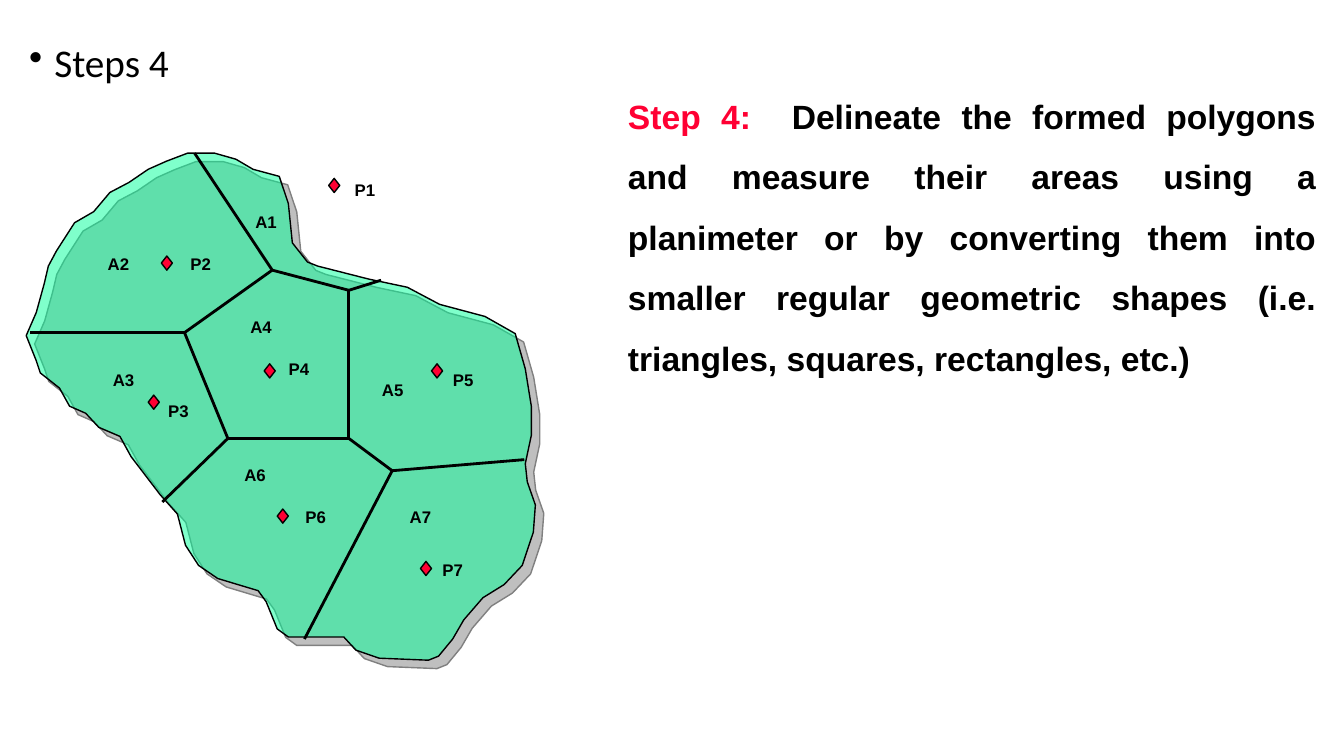
"""Build the slide on step 4 of the Thiessen polygon method."""
from lxml.etree import SubElement
from pptx import Presentation
from pptx.dml.color import RGBColor
from pptx.enum.shapes import MSO_CONNECTOR, MSO_SHAPE
from pptx.enum.text import PP_ALIGN
from pptx.oxml.ns import qn
from pptx.util import Inches, Pt

SIZE = (13.33, 7.5)
BLACK, RED, GREEN, GREY = "000000", "FF0033", "00FF99", "808080"
TITLE = "Steps 4"
STEP = [
    ("Step 4:", RED),
    ("  Delineate the formed polygons and measure their areas using a planimeter or by "
     "converting them into smaller regular geometric shapes (i.e. triangles, squares, "
     "rectangles, etc.)", BLACK),
]
BASIN = [
    (1.86, 1.52), (1.65, 1.6), (1.47, 1.68), (1.28, 1.81), (1.09, 1.91), (0.93, 2.1),
    (0.74, 2.21), (0.56, 2.49), (0.48, 2.64), (0.44, 2.81), (0.36, 3.1), (0.26, 3.33),
    (0.36, 3.58), (0.4, 3.7), (0.59, 3.85), (0.69, 4.03), (0.85, 4.1), (0.98, 4.24),
    (1.19, 4.33), (1.3, 4.53), (1.43, 4.7), (1.59, 4.91), (1.76, 5.1), (1.84, 5.41),
    (1.97, 5.61), (2.16, 5.74), (2.56, 5.86), (2.64, 5.97), (2.75, 6.24), (2.86, 6.32),
    (3.41, 6.32), (3.53, 6.45), (3.76, 6.53), (4.25, 6.55), (4.35, 6.51), (4.49, 6.34),
    (4.6, 6.15), (4.79, 5.93), (5, 5.8), (5.18, 5.61), (5.29, 5.28), (5.31, 5.01),
    (5.23, 4.78), (5.21, 4.6), (5.27, 4.32), (5.27, 4.03), (5.21, 3.66), (5.11, 3.31),
    (4.81, 3.14), (4.36, 3.02), (4.04, 2.85), (3.66, 2.77), (3.15, 2.64), (3.05, 2.6),
    (2.9, 2.41), (2.86, 2.02), (2.77, 1.75), (2.51, 1.68), (2.34, 1.58), (2.13, 1.52),
]
GAUGES = [(1.6, 2.54), (1.47, 3.92), (3.26, 1.77), (2.62, 3.61), (2.75, 5.05),
          (4.28, 3.61), (4.17, 5.57)]
GAUGE_SIZE = (0.11, 0.14)
NODES = {
    "west": (1.83, 3.3), "north": (2.7, 2.68), "east": (3.46, 2.88),
    "southwest": (2.26, 4.35), "south": (3.46, 4.35), "southeast": (3.89, 4.67),
    "edge12": (1.93, 1.52), "edge23": (0.3, 3.3), "edge36": (1.61, 4.98),
    "edge67": (3.02, 6.34), "edge57": (5.2, 4.56), "edge15": (3.78, 2.78),
}
BORDERS = [
    ("west", "north"), ("west", "edge23"), ("west", "southwest"), ("southwest", "edge36"),
    ("southwest", "south"), ("edge12", "north"), ("north", "east"), ("east", "south"),
    ("east", "edge15"), ("south", "southeast"), ("southeast", "edge67"),
    ("southeast", "edge57"),
]
LABEL_HEIGHT = 0.38
LABELS = [
    ("P1", 3.13, 1.73, 0.98), ("A1", 2.26, 2.05, 0.76), ("P2", 1.39, 2.47, 1.2),
    ("A2", 0.63, 2.47, 1.09), ("P3", 1.28, 3.93, 0.98), ("A3", 0.52, 3.62, 1.41),
    ("P4", 2.26, 3.51, 1.41), ("A4", 1.83, 3.09, 1.52), ("P5", 3.78, 3.62, 1.63),
    ("A5", 3.35, 3.72, 1.09), ("P6", 2.37, 4.98, 1.52), ("A6", 1.93, 4.56, 1.2),
    ("P7", 3.89, 5.5, 1.2), ("A7", 3.57, 4.98, 1.2),
]


def inches(*lengths):
    return [Inches(v) for v in lengths]


def rgb(color):
    return RGBColor.from_string(color)


def paint(shape, color):
    shape.shadow.inherit = False
    shape.fill.solid()
    shape.fill.fore_color.rgb = rgb(color)
    shape.line.color.rgb = rgb(BLACK)
    shape.line.width = Pt(1)


def add_text(parent, box, runs, size, font="Arial", bold=True, align=None):
    tf = parent.add_textbox(*inches(*box)).text_frame
    tf.word_wrap = True
    p = tf.paragraphs[0]
    p.alignment = align
    p.font.size, p.font.name, p.font.bold = Pt(size), font, bold
    for text, color in runs:
        r = p.add_run()
        r.text = text
        r.font.color.rgb = rgb(color)
    return p


def add_basin(parent):
    points = [inches(*point) for point in BASIN]
    builder = parent.build_freeform(*points[0])
    builder.add_line_segments(points[1:], close=True)
    basin = builder.convert_to_shape()
    paint(basin, GREEN)
    sppr = basin.element.spPr
    SubElement(sppr.find(".//" + qn("a:srgbClr")), qn("a:alpha"), val="50000")
    shadow = SubElement(sppr.find(qn("a:effectLst")), qn("a:outerShdw"),
                        dist=str(Pt(8.5)), dir="2700000", algn="ctr", rotWithShape="0")
    SubElement(shadow, qn("a:srgbClr"), val=GREY)


def add_border(parent, start, end):
    line = parent.add_connector(MSO_CONNECTOR.STRAIGHT, *inches(*NODES[start], *NODES[end]))
    line.line.color.rgb = rgb(BLACK)
    line.line.width = Pt(2)
    SubElement(line.element.spPr, qn("a:effectLst"))


def main():
    prs = Presentation()
    prs.slide_width, prs.slide_height = inches(*SIZE)
    s = prs.slides.add_slide(prs.slide_layouts[6])

    p = add_text(s.shapes, (0.19, 0.38, 13.14, 6.89), [(TITLE, BLACK)], 28, "Calibri", False)
    p.line_spacing = 0.9
    ppr = p._p.get_or_add_pPr()
    ppr.set("marL", str(Inches(0.25)))
    ppr.set("indent", str(Inches(-0.25)))
    bullet = ppr.makeelement(qn("a:buChar"), {"char": "•"})
    ppr.find(qn("a:lnSpc")).addnext(bullet)

    basin_map = s.shapes.add_group_shape().shapes
    add_basin(basin_map)
    for gauge in GAUGES:
        paint(basin_map.add_shape(MSO_SHAPE.DIAMOND, *inches(*gauge, *GAUGE_SIZE)), RED)
    for start, end in BORDERS:
        add_border(basin_map, start, end)
    for name, x, y, w in LABELS:
        add_text(basin_map, (x, y, w, LABEL_HEIGHT), [(name, BLACK)], 12,
                 align=PP_ALIGN.CENTER)

    p = add_text(s.shapes, (6.13, 0.7, 7.02, 3.06), STEP, 24, align=PP_ALIGN.JUSTIFY)
    p.line_spacing = 1.5
    prs.save("out.pptx")


if __name__ == "__main__":
    main()
